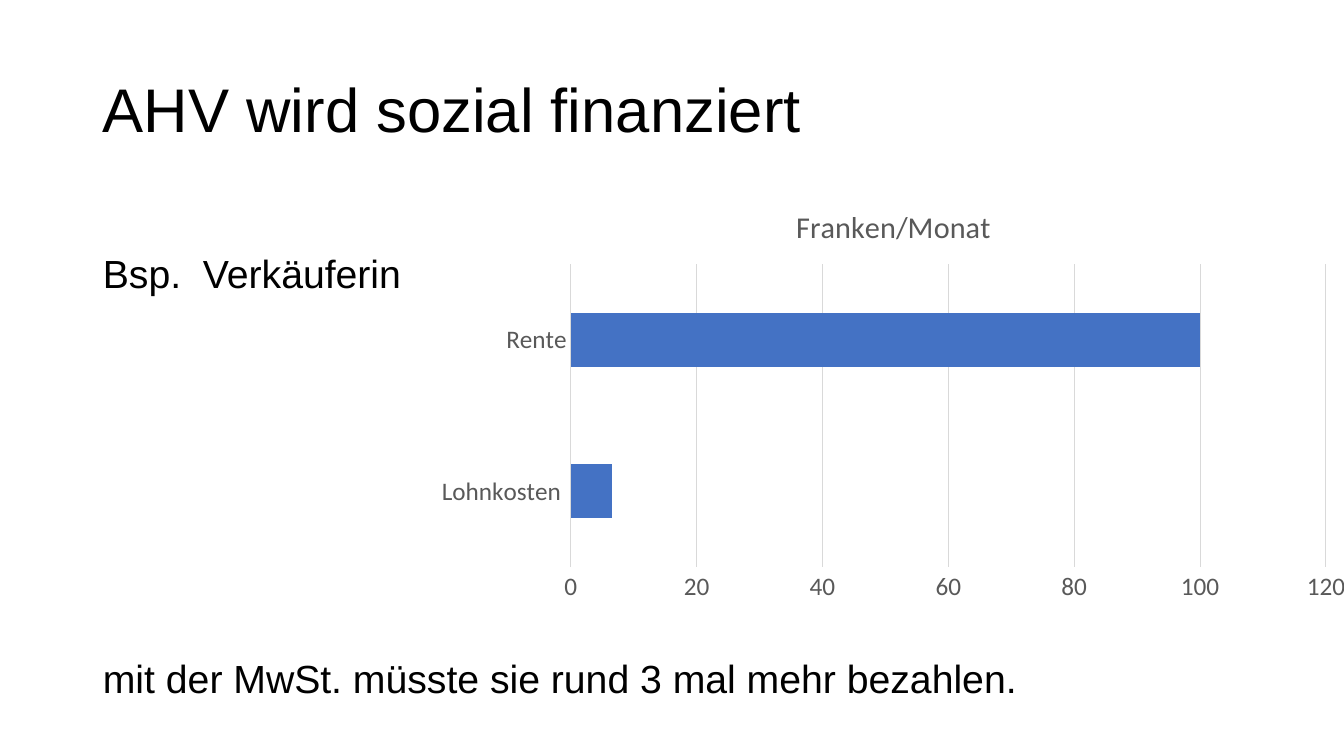
from pptx import Presentation
from pptx.chart.data import CategoryChartData
from pptx.dml.color import RGBColor
from pptx.enum.chart import XL_CHART_TYPE, XL_TICK_MARK
from pptx.enum.text import MSO_ANCHOR
from pptx.util import Emu, Pt

BAR = XL_CHART_TYPE.BAR_CLUSTERED
NO_TICK = XL_TICK_MARK.NONE
TOP, MIDDLE = MSO_ANCHOR.TOP, MSO_ANCHOR.MIDDLE

EMU_PER_PX = 914400 / 100.8
COLORS = {"text": "000000", "label": "595959", "grid": "D9D9D9", "bar": "4472C4"}


def px(n):
    return Emu(round(n * EMU_PER_PX))


def rgb(name):
    return RGBColor.from_string(COLORS[name])


def set_font(font, size, color, name):
    font.size = Pt(size)
    font.name = name
    font.bold = False
    font.color.rgb = rgb(color)


def add_text(s, text, x, y, w, h, size=28, anchor=TOP, spacing=1.0, inset_top=5):
    tf = s.shapes.add_textbox(px(x), px(y), px(w), px(h)).text_frame
    tf.word_wrap = True
    tf.vertical_anchor = anchor
    tf.margin_top = px(inset_top)
    p = tf.paragraphs[0]
    p.line_spacing = spacing
    r = p.add_run()
    r.text = text
    set_font(r.font, size, "text", "Arial")


def style_line(line):
    line.color.rgb = rgb("grid")
    line.width = Pt(0.75)


def add_bar_chart(s, title, values, x, y, w, h):
    data = CategoryChartData()
    data.categories = list(values)
    data.add_series(title, list(values.values()))
    chart = s.shapes.add_chart(BAR, px(x), px(y), px(w), px(h), data).chart
    set_font(chart.font, 18, "text", "Calibri")
    chart.has_legend = False

    # Title
    chart.has_title = True
    tf = chart.chart_title.text_frame
    tf.text = title
    set_font(tf.paragraphs[0].runs[0].font, 21.6, "label", "Calibri")
    chart.chart_title.include_in_layout = False

    # Axes
    for axis in (chart.category_axis, chart.value_axis):
        axis.major_tick_mark = axis.minor_tick_mark = NO_TICK
        set_font(axis.tick_labels.font, 18, "label", "Calibri")
    chart.category_axis.has_major_gridlines = False
    style_line(chart.category_axis.format.line)
    chart.value_axis.format.line.fill.background()
    chart.value_axis.has_major_gridlines = True
    style_line(chart.value_axis.major_gridlines.format.line)

    # Bars
    plot = chart.plots[0]
    plot.gap_width = 182
    plot.vary_by_categories = False
    fill = plot.series[0].format.fill
    fill.solid()
    fill.fore_color.rgb = rgb("bar")


def main():
    prs = Presentation()
    prs.slide_width, prs.slide_height = px(1344), px(756)
    s = prs.slides.add_slide(prs.slide_layouts[6])

    # Heading and example
    add_text(s, "AHV wird sozial finanziert", 93, 40, 1339, 146,
             size=44, anchor=MIDDLE, spacing=0.9)
    add_text(s, "Bsp.  Verkäuferin", 93, 186, 1339, 463, spacing=0.9, inset_top=69)

    # Cost against pension
    add_bar_chart(s, "Franken/Monat", {"Lohnkosten ": 6.5, "Rente": 100},
                  423, 186, 941, 424)

    # Conclusion
    add_text(s, "mit der MwSt. müsste sie rund 3 mal mehr bezahlen.", 93, 649, 1081, 105)

    prs.save("out.pptx")


if __name__ == "__main__":
    main()
